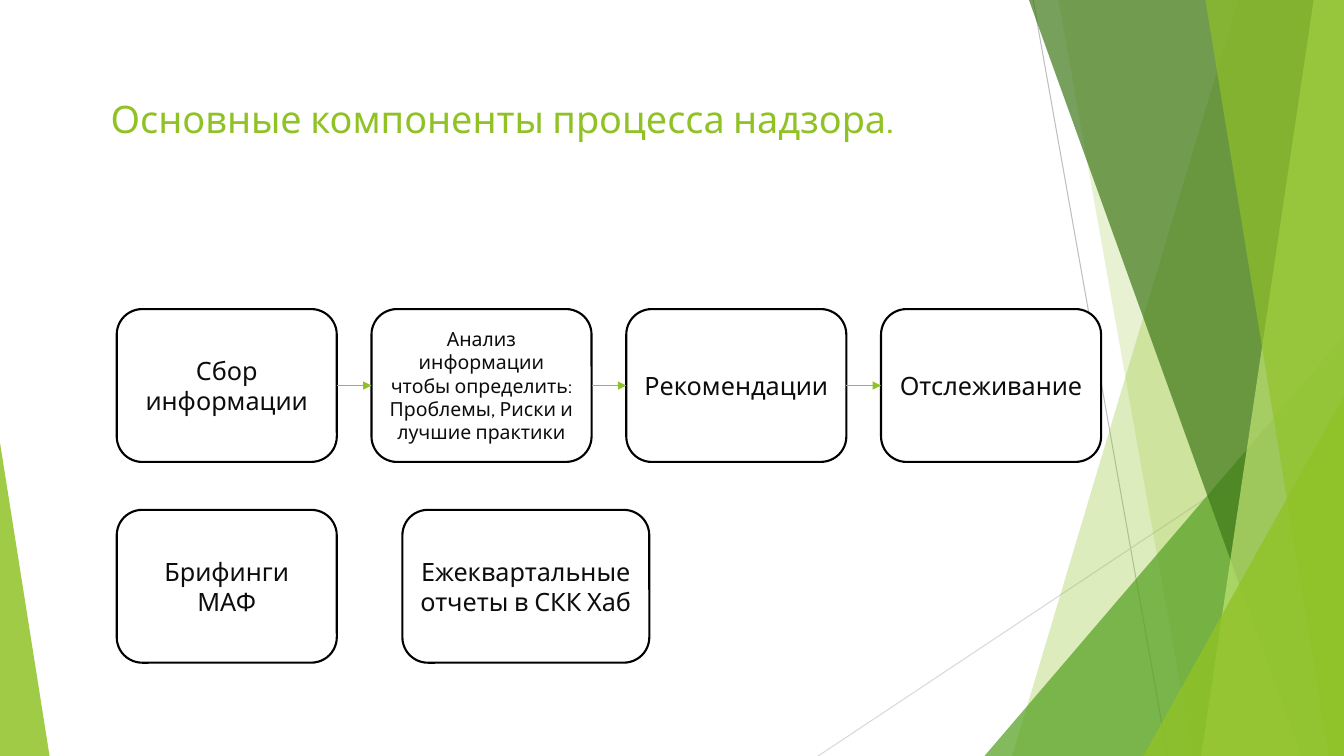
from dataclasses import dataclass
from itertools import pairwise

from pptx import Presentation
from pptx.dml.color import RGBColor
from pptx.enum.shapes import MSO_CONNECTOR, MSO_SHAPE
from pptx.enum.text import MSO_ANCHOR, PP_ALIGN
from pptx.oxml.ns import qn
from pptx.oxml.xmlchemy import OxmlElement
from pptx.shapes.autoshape import Shape
from pptx.shapes.connector import Connector
from pptx.text.text import TextFrame
from pptx.util import Emu, Inches, Pt

STRAIGHT = MSO_CONNECTOR.STRAIGHT
ROUND = MSO_SHAPE.ROUNDED_RECTANGLE
TRIANGLE = MSO_SHAPE.ISOSCELES_TRIANGLE
MIDDLE, TOP = MSO_ANCHOR.MIDDLE, MSO_ANCHOR.TOP
CENTER, LEFT = PP_ALIGN.CENTER, PP_ALIGN.LEFT

CELL = Inches(1) // 12
COLS, ROWS = 160, 90
FONT = "Cabin"
GREEN, INK = "90C226", "0D0D0D"
BOX_W, BOX_H = 26.2, 18.2
FIRST, STEP = 13.9, 30.33
UPPER, LOWER = 36.8, 60.7


@dataclass
class Ray:
    x1: float
    y1: float
    x2: float
    y2: float
    color: str


@dataclass
class Wedge:
    top: float
    base: float
    color: str
    alpha: int


@dataclass
class Corner:
    x: float
    y: float
    width: float
    apex: float
    color: str
    alpha: int


@dataclass
class Box:
    text: str
    x: float
    y: float
    width: float = BOX_W
    size: float = 18


RAYS = [Ray(123, 0, 139, ROWS, "BFBFBF"), Ray(COLS, 48.4, 97.4, ROWS, "D9D9D9")]
DECOR = [
    Wedge(147.4, 120.5, GREEN, 30),
    Wedge(126, 142, GREEN, 20),
    Corner(117.2, 40, 42.8, 1, "54A021", 72),
    Wedge(122.5, 154.9, "3F7819", 70),
    Wedge(156.4, 143, "C0E474", 70),
    Wedge(143.5, 158.2, GREEN, 65),
    Corner(136.1, 47.2, 23.9, 1, GREEN, 80),
    Corner(0, 52.7, 5.9, 0, GREEN, 85),
]
STEPS = [
    ("Сбор информации", 18),
    ("Анализ информации чтобы определить: Проблемы, Риски и лучшие практики", 13.9),
    ("Рекомендации", 18),
    ("Отслеживание", 18),
]
FLOW = [Box(text, FIRST + i * STEP, UPPER, size=size) for i, (text, size) in enumerate(STEPS)]
REPORTS = [
    Box("Брифинги МАФ", FIRST, LOWER),
    Box("Ежеквартальные отчеты в СКК Хаб", 47.9, LOWER, 29.4),
]


def grid(*cells: float) -> list[Emu]:
    return [Emu(round(cell * CELL)) for cell in cells]


def paint(code: str) -> RGBColor:
    return RGBColor.from_string(code)


def tint(shape: Shape, color: str, alpha: int) -> None:
    shape.shadow.inherit = False
    shape.fill.solid()
    shape.fill.fore_color.rgb = paint(color)
    shape.line.fill.background()
    node = OxmlElement("a:alpha")
    node.set("val", str(alpha * 1000))
    shape._element.spPr.find(qn("a:solidFill")).find(qn("a:srgbClr")).append(node)


def write(frame: TextFrame, text: str, size: float, color: str,
          align: PP_ALIGN, anchor: MSO_ANCHOR) -> None:
    frame.word_wrap = True
    frame.vertical_anchor = anchor
    para = frame.paragraphs[0]
    para.text = text
    para.alignment = align
    para.font.name = FONT
    para.font.size = Pt(size)
    para.font.color.rgb = paint(color)


def style(line: Connector, color: str, width: float) -> None:
    line.line.color.rgb = paint(color)
    line.line.width = Pt(width)
    line._element.spPr.append(OxmlElement("a:effectLst"))


def draw_ray(ray: Ray) -> None:
    line = shapes.add_connector(STRAIGHT, *grid(ray.x1, ray.y1, ray.x2, ray.y2))
    style(line, ray.color, 0.75)


def draw_wedge(wedge: Wedge) -> None:
    path = shapes.build_freeform(*grid(wedge.top, 0))
    edge = [(COLS, 0), (COLS, ROWS), (wedge.base, ROWS)]
    path.add_line_segments([grid(*point) for point in edge], close=True)
    tint(path.convert_to_shape(), wedge.color, wedge.alpha)


def draw_corner(corner: Corner) -> None:
    shape = shapes.add_shape(
        TRIANGLE, *grid(corner.x, corner.y, corner.width, ROWS - corner.y))
    shape.adjustments[0] = corner.apex
    tint(shape, corner.color, corner.alpha)


def draw_box(box: Box) -> Shape:
    shape = shapes.add_shape(ROUND, *grid(box.x, box.y, box.width, BOX_H))
    shape.shadow.inherit = False
    shape.fill.solid()
    shape.fill.fore_color.rgb = paint("FFFFFF")
    shape.line.color.rgb = paint("000000")
    shape.line.width = Pt(1.5)
    write(shape.text_frame, box.text, box.size, INK, CENTER, MIDDLE)
    return shape


def draw_arrow(start: Shape, end: Shape) -> None:
    line = shapes.add_connector(STRAIGHT, *grid(0, 0, 0, 0))
    line.begin_connect(start, 3)
    line.end_connect(end, 1)
    style(line, GREEN, 1)
    head = OxmlElement("a:tailEnd")
    head.set("type", "triangle")
    line.line._get_or_add_ln().append(head)


deck = Presentation()
deck.slide_width, deck.slide_height = grid(COLS, ROWS)
shapes = deck.slides.add_slide(deck.slide_layouts[6]).shapes

for ray in RAYS:
    draw_ray(ray)
for part in DECOR:
    if isinstance(part, Wedge):
        draw_wedge(part)
    else:
        draw_corner(part)

title = shapes.add_textbox(*grid(12, 10.8, 125, 11.4))
write(title.text_frame, "Основные компоненты процесса надзора.", 27, GREEN, LEFT, TOP)

flow = [draw_box(box) for box in FLOW]
for start, end in pairwise(flow):
    draw_arrow(start, end)
for box in REPORTS:
    draw_box(box)

deck.save("out.pptx")
